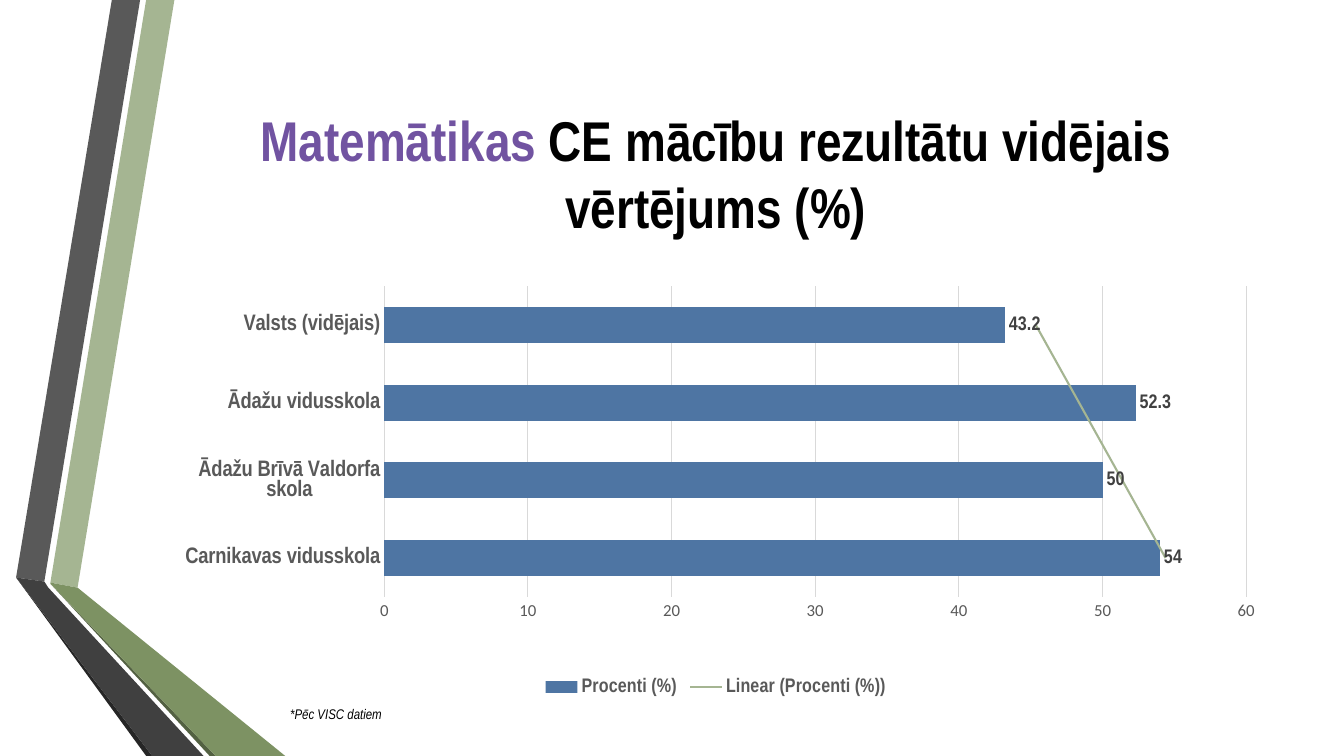
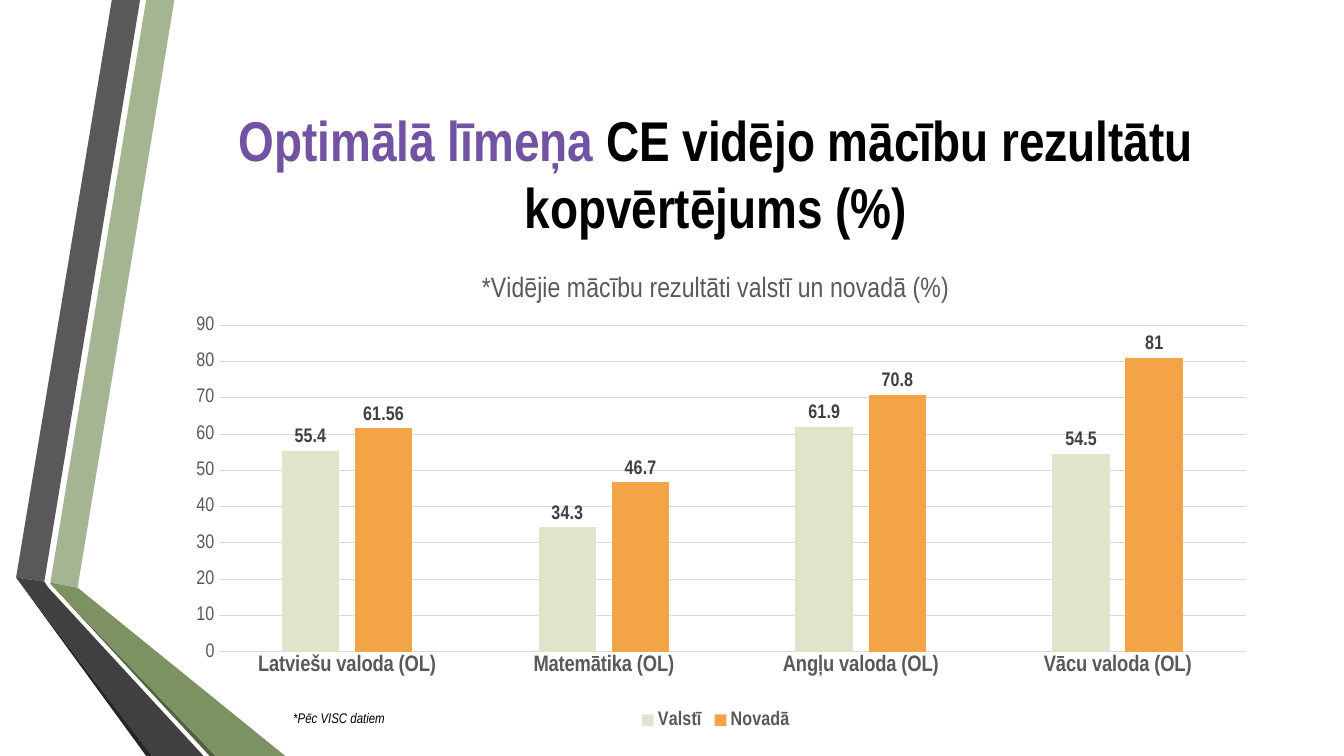
from lxml.etree import SubElement, fromstring
from pptx import Presentation
from pptx.chart.data import CategoryChartData as Data
from pptx.dml.color import RGBColor
from pptx.enum.chart import XL_CHART_TYPE as Kind
from pptx.enum.chart import XL_LABEL_POSITION as Spot
from pptx.enum.chart import XL_LEGEND_POSITION as Side
from pptx.enum.chart import XL_TICK_MARK as Tick
from pptx.enum.text import MSO_ANCHOR as Anchor
from pptx.enum.text import MSO_AUTO_SIZE as Fit
from pptx.enum.text import PP_ALIGN as Align
from pptx.oxml.ns import nsdecls, qn
from pptx.util import Inches, Pt

FACE = "Arial Narrow"
PURPLE, BLACK, GRAY, DARK = "7153A1", "000000", "595959", "404040"
GRID, SAGE, BLUE, PALE, ORANGE = "D9D9D9", "A5B592", "4E75A3", "DFE5CA", "F3A447"

HEAD = dict(name=FACE, size=Pt(40), bold=True, color=PURPLE)
NOTE = dict(name=FACE, size=Pt(10), italic=True, color=BLACK)
NAMES = dict(name=FACE, size=Pt(16), bold=True, color=GRAY)
KEYS = dict(NAMES, size=Pt(14))
LABELS = dict(KEYS, color=DARK)

# Ribbon colours and corners, in hundredths of an inch
BANDS = [
    (SAGE, [(50, 578), (77, 583), (173, 0), (145, 0)]),
    (GRAY, [(139, 0), (111, 0), (16, 573), (44, 577)]),
    ("262626", [(16, 573), (145, 750), (151, 750)]),
    ("536142", [(50, 579), (208, 750), (214, 750)]),
    ("7D9263", [(50, 578), (50, 579), (214, 750), (283, 750), (77, 583)]),
    (DARK, [(202, 750), (48, 583), (44, 577), (16, 573), (151, 750)]),
]


def rgb(code):
    return RGBColor.from_string(code)


def style(font, look):
    for key, value in look.items():
        if key == "color":
            font.color.rgb = rgb(value)
        else:
            setattr(font, key, value)


def stroke(line, code, width):
    line.color.rgb = rgb(code)
    line.width = Pt(width)


class Deck:
    def __init__(self):
        self.prs = Presentation()
        self.prs.slide_width, self.prs.slide_height = Inches(13.33), Inches(7.5)
        self.layout = self.prs.slide_layouts[5]
        self.slide = None

    def add(self):
        self.slide = self.prs.slides.add_slide(self.layout)

    def bands(self):
        """Draw the ribbons and hand them to the layout, so all slides share them."""
        for num, (code, spots) in enumerate(BANDS, 20):
            pen = self.slide.shapes.build_freeform(*spots[0], scale=Inches(0.01))
            pen.add_line_segments(spots[1:], close=True)
            band = pen.convert_to_shape()
            band.shadow.inherit = False
            band.fill.solid()
            band.fill.fore_color.rgb = rgb(code)
            band.line.fill.background()
            band.element.nvSpPr.cNvPr.id = num
            self.layout.shapes.element.append(band.element)

    def title(self, lead, rest):
        head = self.slide.shapes.title
        head.left, head.top = Inches(1.62), Inches(0.75)
        head.width, head.height = Inches(10.96), Inches(1.92)
        frame = head.text_frame
        frame.auto_size, frame.vertical_anchor = Fit.NONE, Anchor.MIDDLE
        para = frame.paragraphs[0]
        para.alignment = Align.CENTER
        for text, code in ((lead + " ", PURPLE), (rest, BLACK)):
            run = para.add_run()
            run.text = text
            style(run.font, dict(HEAD, color=code))

    def note(self, left, top, text):
        box = self.slide.shapes.add_textbox(
            Inches(left), Inches(top), Inches(2.67), Inches(0.27))
        frame = box.text_frame
        frame.word_wrap, frame.auto_size = True, Fit.SHAPE_TO_FIT_TEXT
        run = frame.paragraphs[0].add_run()
        run.text = text
        style(run.font, NOTE)

    def chart(self, kind, top, high, cats, rows, plot, gap, lap, peak, scale):
        """Add a bar chart; rows hold (name, colour, values), plot the inner area."""
        data = Data()
        data.categories = cats
        for name, _, values in rows:
            data.add_series(name, values)
        chart = self.slide.shapes.add_chart(
            kind, Inches(1.62), Inches(top), Inches(10.96), Inches(high), data).chart
        style(chart.font, dict(name="Calibri", size=Pt(10), color=BLACK))
        chart.has_title = False
        chart.has_legend = True
        chart.legend.position = Side.BOTTOM
        chart.legend.include_in_layout = False
        style(chart.legend.font, KEYS)
        self.axes(chart, peak, scale)
        bars = chart.plots[0]
        bars.gap_width, bars.overlap, bars.vary_by_categories = gap, lap, False
        for row, (_, code, _) in zip(bars.series, rows):
            row.format.fill.solid()
            row.format.fill.fore_color.rgb = rgb(code)
            tags = row.data_labels
            tags.show_value, tags.position = True, Spot.OUTSIDE_END
            style(tags.font, LABELS)
        self.place(chart, plot)
        return chart

    def axes(self, chart, peak, scale):
        names, nums = chart.category_axis, chart.value_axis
        for axis, look in ((names, NAMES), (nums, scale)):
            axis.major_tick_mark = axis.minor_tick_mark = Tick.NONE
            style(axis.tick_labels.font, look)
        stroke(names.format.line, GRID, 0.75)
        nums.format.line.fill.background()
        nums.minimum_scale, nums.maximum_scale, nums.major_unit = 0, peak, 10
        nums.has_major_gridlines = True
        stroke(nums.major_gridlines.format.line, GRID, 0.75)

    def place(self, chart, plot):
        area = chart.element.find(".//" + qn("c:plotArea"))
        for old in area.findall(qn("c:layout")):
            area.remove(old)
        layout = fromstring(f"<c:layout {nsdecls('c')}><c:manualLayout/></c:layout>")
        parts = [("layoutTarget", "inner"), ("xMode", "edge"), ("yMode", "edge")]
        for tag, value in parts + list(zip("xywh", plot)):
            SubElement(layout[0], qn("c:" + tag)).set("val", str(value))
        area.insert(0, layout)

    def trend(self, chart, code):
        line = fromstring(
            f'<c:trendline {nsdecls("c", "a")}><c:spPr><a:ln w="{Pt(1.5)}"><a:solidFill>'
            f'<a:srgbClr val="{code}"/></a:solidFill></a:ln></c:spPr>'
            '<c:trendlineType val="linear"/><c:dispRSqr val="0"/><c:dispEq val="0"/>'
            '</c:trendline>')
        chart.element.find(".//" + qn("c:cat")).addprevious(line)

    def caption(self, chart, text):
        chart.has_title = True
        chart.chart_title.include_in_layout = False
        run = chart.chart_title.text_frame.paragraphs[0].add_run()
        run.text = text
        style(run.font, dict(name=FACE, size=Pt(20), bold=False, color=GRAY))


def main():
    deck = Deck()
    source = "*Pēc VISC datiem"

    deck.add()
    deck.bands()
    deck.title("Matemātikas", "CE mācību rezultātu vidējais vērtējums (%)")
    chart = deck.chart(
        Kind.BAR_CLUSTERED, 2.67, 4.28,
        ["Carnikavas vidusskola", "Ādažu Brīvā Valdorfa skola",
         "Ādažu vidusskola", "Valsts (vidējais)"],
        [("Procenti (%)", BLUE, [54, 50, 52.3, 43.2])],
        plot=(0.2, 0.04, 0.78, 0.72), gap=115, lap=-20, peak=60,
        scale=dict(name="Calibri", size=Pt(12), color=GRAY))
    deck.trend(chart, SAGE)
    deck.note(2.78, 6.95, source)

    deck.add()
    deck.title("Optimālā līmeņa", "CE vidējo mācību rezultātu kopvērtējums (%)")
    chart = deck.chart(
        Kind.COLUMN_CLUSTERED, 2.51, 4.77,
        ["Latviešu valoda (OL)", "Matemātika (OL)",
         "Angļu valoda (OL)", "Vācu valoda (OL)"],
        [("Valstī", PALE, [55.4, 34.3, 61.9, 54.5]),
         ("Novadā", ORANGE, [61.56, 46.7, 70.8, 81])],
        plot=(0.05, 0.15, 0.93, 0.68), gap=219, lap=-27, peak=90,
        scale=dict(name=FACE, size=Pt(14), color=GRAY))
    deck.caption(chart, "*Vidējie mācību rezultāti valstī un novadā (%)")
    deck.note(2.81, 6.99, source)

    deck.prs.save("out.pptx")


if __name__ == "__main__":
    main()
